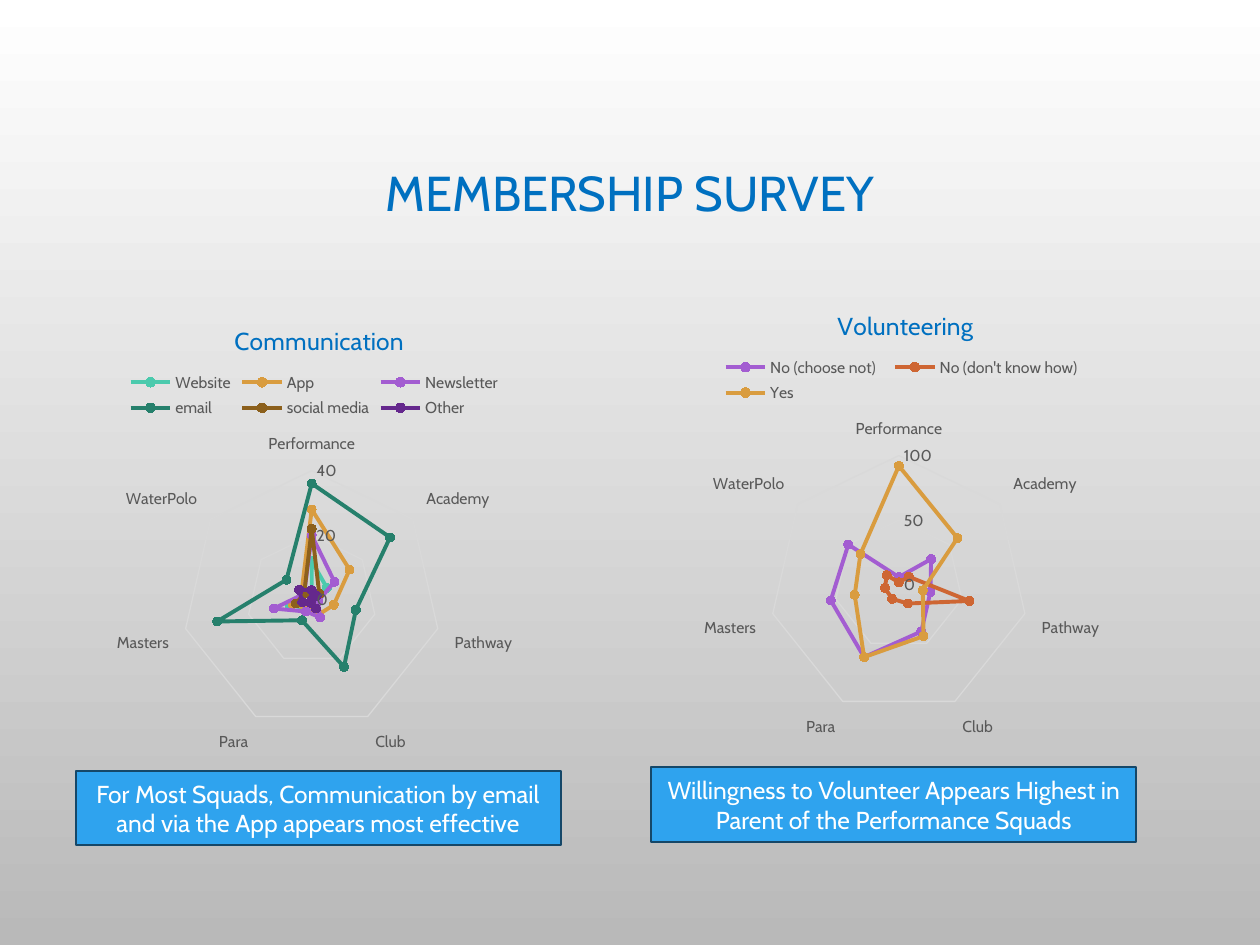
from lxml.etree import SubElement
from pptx import Presentation
from pptx.chart.data import CategoryChartData
from pptx.dml.color import RGBColor
from pptx.enum.chart import XL_CHART_TYPE, XL_LEGEND_POSITION, XL_MARKER_STYLE, XL_TICK_MARK
from pptx.enum.shapes import MSO_SHAPE
from pptx.enum.text import MSO_ANCHOR, PP_ALIGN
from pptx.oxml import parse_xml
from pptx.oxml.ns import nsdecls, qn
from pptx.util import Pt

FONT = "Cabin"
WHITE = RGBColor(0xFF, 0xFF, 0xFF)
SILVER = RGBColor(0xB9, 0xB9, 0xB9)
BLUE = RGBColor(0x00, 0x70, 0xC0)
SKY = RGBColor(0x2F, 0xA3, 0xEE)
NAVY = RGBColor(0x15, 0x47, 0x68)
GREY = RGBColor(0x59, 0x59, 0x59)
PALE = RGBColor(0xD9, 0xD9, 0xD9)
MINT = RGBColor(0x4B, 0xCA, 0xAD)
GOLD = RGBColor(0xD9, 0x9C, 0x3F)
LILAC = RGBColor(0xA3, 0x5D, 0xD1)
GREEN = RGBColor(0x26, 0x80, 0x6C)
BROWN = RGBColor(0x8C, 0x60, 0x1C)
PLUM = RGBColor(0x65, 0x28, 0x8D)
RUST = RGBColor(0xCE, 0x66, 0x33)

SQUADS = ["Performance", "Academy", "Pathway", "Club", "Para", "Masters", "WaterPolo"]
CONTACT = [
    ("Website", (12, 6, 2, 2, 3, 7, 0), MINT),
    ("App", (28, 15, 7, 5, 3, 6, 4), GOLD),
    ("Newsletter", (20, 9, 2, 6, 4, 12, 3), LILAC),
    ("email", (36, 31, 14, 23, 7, 30, 10), GREEN),
    ("social media", (22, 3, 0, 3, 0, 5, 3), BROWN),
    ("Other", (3, 2, 0, 3, 1, 3, 5), PLUM),
]
HELP = [
    ("No (choose not)", (6, 32, 25, 40, 62, 54, 50), LILAC),
    ("No (don't know how)", (2, 10, 56, 16, 12, 11, 12), RUST),
    ("Yes", (92, 58, 19, 44, 62, 35, 38), GOLD),
]


def style(font, size, color):
    font.name, font.size, font.bold = FONT, Pt(size), False
    font.color.rgb = color


def write(frame, text, size=14, color=WHITE, align=PP_ALIGN.CENTER, space=None):
    """Put one formatted paragraph into a text frame."""
    frame.word_wrap = True
    frame.vertical_anchor = MSO_ANCHOR.MIDDLE
    para = frame.paragraphs[0]
    para.alignment = align
    if space:
        para.line_spacing = space
    run = para.add_run()
    run.text = text
    style(run.font, size, color)


def place(node, index, inner=False, **parts):
    """Give a chart part a manual layout, in fractions of the chart."""
    old = node.find(qn("c:layout"))
    if old is not None:
        node.remove(old)
    layout = parse_xml(f"<c:layout {nsdecls('c')}><c:manualLayout/></c:layout>")
    manual = layout[0]
    if inner:
        SubElement(manual, qn("c:layoutTarget")).set("val", "inner")
    for mode in ("xMode", "yMode"):
        SubElement(manual, qn(f"c:{mode}")).set("val", "edge")
    for key, value in parts.items():
        SubElement(manual, qn(f"c:{key}")).set("val", str(value))
    node.insert(index, layout)


class Deck:
    def __init__(self):
        self.show = Presentation()
        self.show.slide_width, self.show.slide_height = Pt(720), Pt(540)
        self.slide = self.show.slides.add_slide(self.show.slide_layouts[6])

    def backdrop(self, top, bottom):
        fill = self.slide.background.fill
        fill.gradient()
        fill.gradient_angle = 270
        for stop, color in zip(fill.gradient_stops, (top, bottom)):
            stop.color.rgb = color

    def title(self, text, x, y, w, h):
        box = self.slide.shapes.add_textbox(Pt(x), Pt(y), Pt(w), Pt(h))
        write(box.text_frame, text, size=28, color=BLUE, space=0.9)

    def note(self, text, x, y, w=277.2, h=42.5):
        box = self.slide.shapes.add_shape(MSO_SHAPE.RECTANGLE, Pt(x), Pt(y), Pt(w), Pt(h))
        box.shadow.inherit = False
        box.fill.solid()
        box.fill.fore_color.rgb = SKY
        box.line.color.rgb = NAVY
        box.line.width = Pt(1.25)
        write(box.text_frame, text)

    def radar(self, name, rows, x, y, top, indent, w=301.7, h=269.3):
        data = CategoryChartData()
        data.categories = SQUADS
        for label, values, _ in rows:
            data.add_series(label, values)
        chart = self.slide.shapes.add_chart(
            XL_CHART_TYPE.RADAR_MARKERS, Pt(x), Pt(y), Pt(w), Pt(h), data).chart
        style(chart.font, 10, GREY)

        # Title and legend
        chart.has_title = True
        write(chart.chart_title.text_frame, name, color=BLUE)
        place(chart.chart_title._element, 1, x=indent, y=0.05)
        chart.has_legend = True
        chart.legend.position = XL_LEGEND_POSITION.TOP
        chart.legend.include_in_layout = False
        style(chart.legend.font, 9, GREY)
        place(chart.legend._element, 1, x=0.14, y=0.15, w=0.72, h=0.12)
        area = chart._chartSpace.find(".//" + qn("c:plotArea"))
        place(area, 0, inner=True, x=0.25, y=0.37, w=0.49, h=0.55)

        # Axes
        for axis in (chart.category_axis, chart.value_axis):
            axis.major_tick_mark = axis.minor_tick_mark = XL_TICK_MARK.NONE
            style(axis.tick_labels.font, 9, GREY)
        chart.category_axis.has_major_gridlines = False
        scale = chart.value_axis
        scale.minimum_scale, scale.maximum_scale = 0, top
        scale.major_unit = top / 2
        scale.has_major_gridlines = True
        scale.format.line.fill.background()
        for line in (chart.category_axis.format.line, scale.major_gridlines.format.line):
            line.color.rgb = PALE
            line.width = Pt(0.75)

        # Series
        plot = chart.plots[0]
        plot.vary_by_categories = False
        for series, (_, _, color) in zip(plot.series, rows):
            series.smooth = False
            series.format.line.color.rgb = color
            series.format.line.width = Pt(2.25)
            mark = series.marker
            mark.style, mark.size = XL_MARKER_STYLE.CIRCLE, 5
            mark.format.fill.solid()
            mark.format.fill.fore_color.rgb = color
            mark.format.line.color.rgb = color


def main():
    deck = Deck()
    deck.backdrop(WHITE, SILVER)
    deck.title("MEMBERSHIP SURVEY", 54, 49, 612, 126)

    # Charts
    deck.radar("Communication", CONTACT, 28.8, 169.2, top=40, indent=0.34)
    deck.radar("Volunteering", HELP, 364.3, 160.6, top=100, indent=0.37)

    # Findings
    deck.note("For Most Squads, Communication by email and via the App appears most effective",
              43.2, 440.6)
    deck.note("Willingness to Volunteer Appears Highest in Parent of the Performance Squads",
              372.2, 438.5)
    deck.show.save("out.pptx")


if __name__ == "__main__":
    main()
